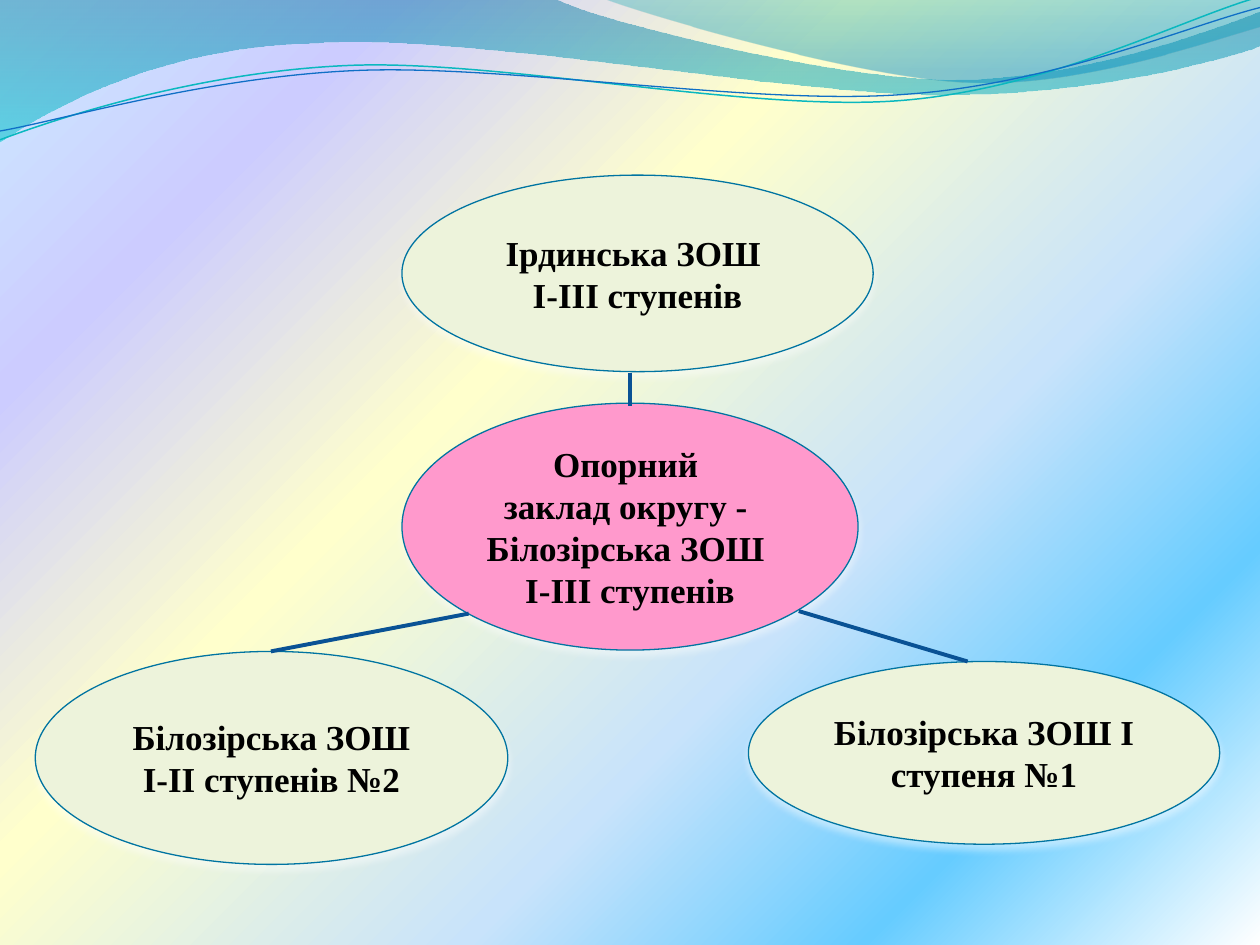
from lxml import etree
from pptx import Presentation
from pptx.dml.color import RGBColor
from pptx.enum.shapes import MSO_CONNECTOR as Connector, MSO_SHAPE as Preset
from pptx.enum.text import MSO_ANCHOR as Anchor, PP_ALIGN as Align
from pptx.oxml import parse_xml
from pptx.oxml.ns import nsdecls, qn
from pptx.util import Inches, Pt

COLORS = {
    "hub": "FF99CC", "school": "EDF3DB", "outline": "0074A1",
    "link": "095295", "text": "000000", "glow": "FFFFFF",
    "teal_line": "0AB8BF", "blue_line": "0F6FC6",
}
SKY_STOPS = [(0, "FFFFFF", 100), (18, "66CCFF", 100), (36, "C8E3FB", 100),
             (61, "FFFFCC", 100), (82, "CCCCFF", 100), (100, "CCECFF", 100)]
SKY_SHADE = ('<a:path path="circle">'
             '<a:fillToRect l="100000" t="100000"/></a:path>')
DOWNWARD = '<a:lin ang="5400000" scaled="1"/>'
TEXT_FORMAT = {"name": "Times New Roman", "size": Pt(20), "bold": True}

BANDS = [
    ((0, 0), [[(4.4, -0.01)],
              [(4.76, 0.17), (6.64, 0.63), (7.58, 0.63)],
              [(8.53, 0.63), (9.58, 0.26), (10, 0.09)],
              [(10.01, 0.36)],
              [(9.83, 0.44), (8.7, 0.76), (7.46, 0.75)],
              [(6.22, 0.75), (3.82, 0.28), (2.57, 0.34)],
              [(1.29, 0.36), (0.46, 0.83), (-0.01, 1.13)],
              [(0, 0)]],
     [(0, "0074A1", 45), (100, "00C6CF", 55)]),
    ((4.79, -0.01), [[(5.09, 0.11), (6.82, 0.62), (7.69, 0.65)],
                     [(8.56, 0.69), (9.61, 0.32), (10, 0.21)],
                     [(10, 0)],
                     [(4.79, -0.01)]],
     [(0, "00A1A9", 30), (80, "008BBF", 45)]),
]
WAVES = [
    ((0, 1.11), [[(0.48, 0.93), (1.58, 0.57), (2.77, 0.52)],
                 [(3.95, 0.47), (5.93, 0.89), (7.13, 0.8)],
                 [(8.33, 0.71), (9.38, 0.15), (9.98, -0.02)]],
     "teal_line", 0.85),
    ((0, 1.04), [[(0.47, 0.96), (1.64, 0.61), (2.83, 0.56)],
                 [(4.03, 0.51), (5.97, 0.84), (7.17, 0.75)],
                 [(8.36, 0.67), (9.41, 0.21), (10, 0.06)]],
     "blue_line", 0.75),
]
SCHOOLS = [
    ((3.19, 3.2, 3.62, 1.96), "hub",
     ["Опорний ", "заклад округу - ", "Білозірська ЗОШ ", "І-ІІІ ступенів"]),
    ((0.28, 5.17, 3.75, 1.69), "school", ["Білозірська ЗОШ І-ІІ ступенів №2"]),
    ((5.94, 5.25, 3.74, 1.45), "school", ["Білозірська ЗОШ І ступеня №1"]),
    ((3.19, 1.39, 3.74, 1.56), "school", ["Ірдинська ЗОШ ", "І-ІІІ ступенів"]),
]
LINKS = [(5, 3.22, 5, 2.96), (2.15, 5.17, 3.72, 4.87), (7.68, 5.25, 6.34, 4.85)]


def rgb(key):
    return RGBColor.from_string(COLORS[key])


def gradient_xml(stops, shade):
    marks = "".join(
        f'<a:gs pos="{pos * 1000}"><a:srgbClr val="{color}">'
        f'<a:alpha val="{alpha * 1000}"/></a:srgbClr></a:gs>'
        for pos, color, alpha in stops)
    return parse_xml(f'<a:gradFill {nsdecls("a")} rotWithShape="1">'
                     f'<a:gsLst>{marks}</a:gsLst>{shade}</a:gradFill>')


def apply_gradient(fill, holder, stops, shade):
    fill.gradient()
    blank = next(holder.iter(qn("a:gradFill")))
    blank.getparent().replace(blank, gradient_xml(stops, shade))


def set_line(line, color, width):
    line.color.rgb = rgb(color)
    line.width = Pt(width)


def bend_segments(outline, segments):
    steps = iter(list(outline.element.iter(qn("a:lnTo"))))
    for segment in segments:
        group = [next(steps) for _ in segment]
        if len(group) == 3:
            curve = etree.Element(qn("a:cubicBezTo"))
            group[0].addprevious(curve)
            for step in group:
                curve.append(step[0])
                step.getparent().remove(step)


def add_outline(slide, start, segments, close):
    points = [tuple(map(Inches, point)) for segment in segments for point in segment]
    builder = slide.shapes.build_freeform(*map(Inches, start))
    builder.add_line_segments(points, close=close)
    outline = builder.convert_to_shape()
    bend_segments(outline, segments)
    outline.shadow.inherit = False
    return outline


def add_band(slide, start, segments, stops):
    band = add_outline(slide, start, segments, True)
    apply_gradient(band.fill, band.element.spPr, stops, DOWNWARD)
    band.line.fill.background()


def add_wave(slide, start, segments, color, width):
    wave = add_outline(slide, start, segments, False)
    wave.fill.background()
    set_line(wave.line, color, width)


def add_glow(shape):
    shape.shadow.inherit = False
    effects = shape.element.spPr.find(qn("a:effectLst"))
    effects.append(parse_xml(
        f'<a:outerShdw {nsdecls("a")} blurRad="{Pt(4.5)}" dist="{Pt(3)}" '
        f'dir="5400000" rotWithShape="0"><a:srgbClr val="{COLORS["glow"]}">'
        '<a:alpha val="48000"/></a:srgbClr></a:outerShdw>'))


def add_school(slide, box, color, lines):
    school = slide.shapes.add_shape(Preset.OVAL, *map(Inches, box))
    school.fill.solid()
    school.fill.fore_color.rgb = rgb(color)
    set_line(school.line, "outline", 0.75)
    add_glow(school)
    frame = school.text_frame
    frame.word_wrap = True
    frame.vertical_anchor = Anchor.MIDDLE
    for index, text in enumerate(lines):
        paragraph = frame.add_paragraph() if index else frame.paragraphs[0]
        paragraph.alignment = Align.CENTER
        run = paragraph.add_run()
        run.text = text
        for name, value in TEXT_FORMAT.items():
            setattr(run.font, name, value)
        run.font.color.rgb = rgb("text")


def add_link(slide, ends):
    link = slide.shapes.add_connector(Connector.STRAIGHT, *map(Inches, ends))
    set_line(link.line, "link", 2.25)
    link.element.spPr.append(parse_xml(f'<a:effectLst {nsdecls("a")}/>'))


def main():
    deck = Presentation()
    deck.slide_width, deck.slide_height = Inches(10), Inches(7.5)
    slide = deck.slides.add_slide(deck.slide_layouts[6])
    apply_gradient(slide.background.fill, slide.element, SKY_STOPS, SKY_SHADE)
    for band in BANDS:
        add_band(slide, *band)
    for wave in WAVES:
        add_wave(slide, *wave)
    for school in SCHOOLS:
        add_school(slide, *school)
    for ends in LINKS:
        add_link(slide, ends)
    deck.save("out.pptx")


if __name__ == "__main__":
    main()
